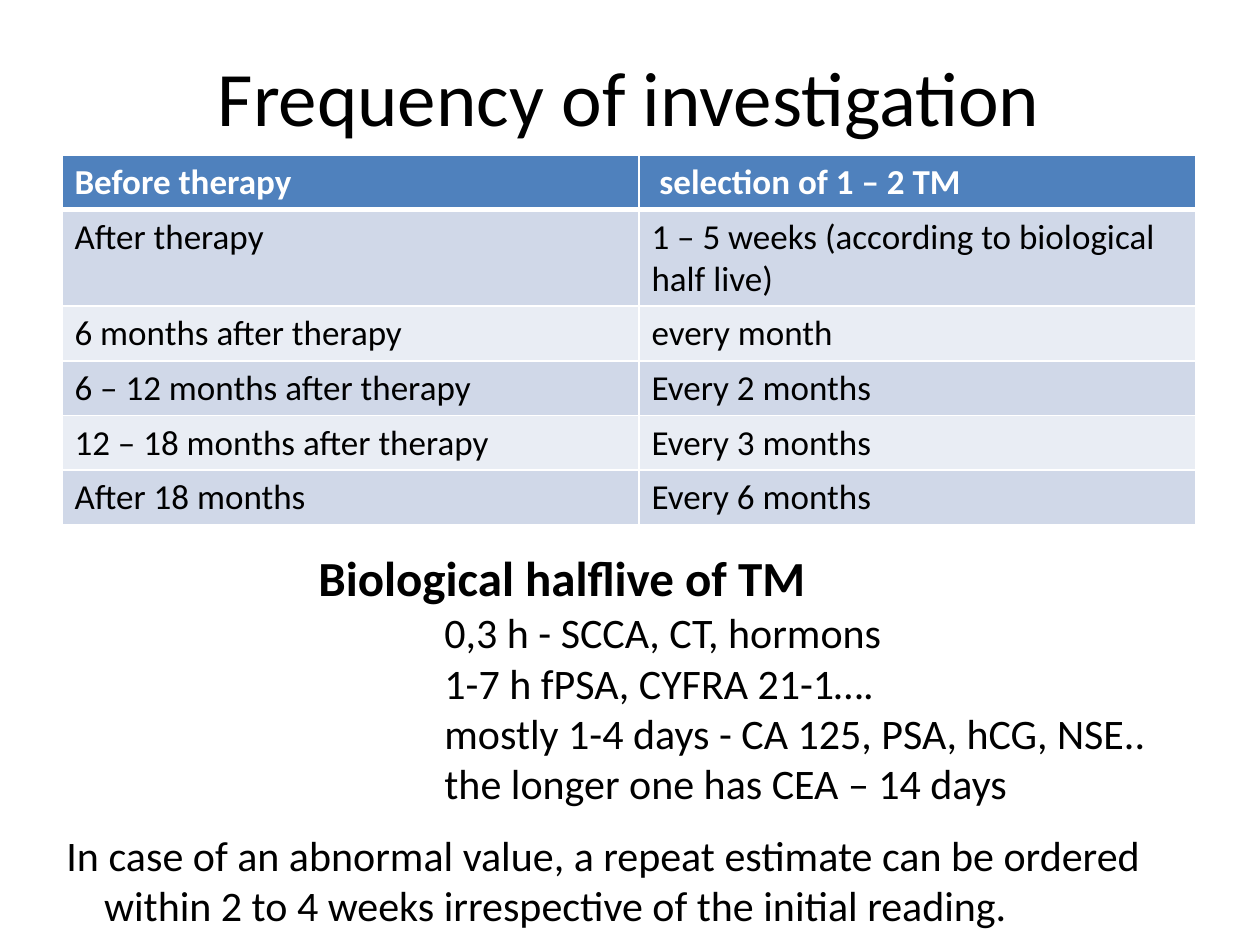
from lxml.etree import SubElement
from pptx import Presentation
from pptx.dml.color import RGBColor
from pptx.enum.text import MSO_ANCHOR as Anchor, PP_ALIGN as Align
from pptx.oxml.ns import qn
from pptx.util import Cm, Pt


def style(para, size, color="000000", bold=False):
    for span in para.runs:
        span.font.name = "Calibri"
        span.font.size = Pt(size)
        span.font.bold = bold
        span.font.color.rgb = RGBColor.from_string(color)


def add_border(cell, side, width):
    line = SubElement(cell._tc.get_or_add_tcPr(), qn(f"a:{side}"), w=str(Pt(width)))
    fill = SubElement(line, qn("a:solidFill"))
    SubElement(fill, qn("a:srgbClr"), val="FFFFFF")


deck = Presentation()
deck.slide_width = Cm(25.4)
deck.slide_height = Cm(19.05)
page = deck.slides.add_slide(deck.slide_layouts[6])

title = page.shapes.add_textbox(Cm(1.25), Cm(0.33), Cm(22.86), Cm(3.18))
title.text_frame.word_wrap = True
title.text_frame.vertical_anchor = Anchor.MIDDLE
title.text_frame.text = "Frequency of investigation"
title.text_frame.paragraphs[0].alignment = Align.CENTER
style(title.text_frame.paragraphs[0], 44)

schedule = [
    ("Before therapy", " selection of 1 – 2 TM"),
    ("After therapy", "1 – 5 weeks (according to biological half live)"),
    ("6 months after therapy", "every month"),
    ("6 – 12 months after therapy", "Every 2 months"),
    ("12 – 18 months after therapy", "Every 3 months"),
    ("After 18 months", "Every 6 months"),
]
table = page.shapes.add_table(
    len(schedule), 2, Cm(1.25), Cm(3.12), Cm(22.86), Cm(6.24)
).table
table.columns[0].width = Cm(11.63)
table.columns[1].width = Cm(11.23)

for row, entries in enumerate(schedule):
    header = row == 0
    table.rows[row].height = Cm(1.04)
    for column, entry in enumerate(entries):
        cell = table.cell(row, column)
        cell.text = entry
        style(cell.text_frame.paragraphs[0], 20, "FFFFFF" if header else "000000", header)
        for side in ("lnL", "lnR", "lnT", "lnB"):
            thick = (header and side == "lnB") or (row == 1 and side == "lnT")
            add_border(cell, side, 3 if thick else 1)
        cell.fill.solid()
        band = "4F81BD" if header else "D0D8E8" if row % 2 else "E9EDF4"
        cell.fill.fore_color.rgb = RGBColor.from_string(band)

notes = [
    ("Biological halflive of TM", 28, 5.08, 0),
    ("0,3 h - SCCA, CT, hormons", 24, 7.62, 0),
    ("1-7 h fPSA, CYFRA 21-1….", 24, 7.62, 0),
    ("mostly 1-4 days - CA 125, PSA, hCG, NSE..", 24, 7.62, 0),
    ("the longer one has CEA – 14 days", 24, 7.62, 0),
    (
        "In case of an abnormal value, a repeat estimate can be ordered "
        "within 2 to 4 weeks irrespective of the initial reading.",
        24, 0.76, -0.76,
    ),
]
box = page.shapes.add_textbox(Cm(1.09), Cm(10.92), Cm(23.01), Cm(8.03))
box.text_frame.word_wrap = True
box.text_frame.text = "\n".join(note[0] for note in notes)
for para, (_, size, margin, indent) in zip(box.text_frame.paragraphs, notes):
    style(para, size, bold=size == 28)
    properties = para._p.get_or_add_pPr()
    properties.set("marL", str(Cm(margin)))
    properties.set("indent", str(Cm(indent)))
box.text_frame.paragraphs[-1].space_before = Pt(12)

deck.save("out.pptx")
